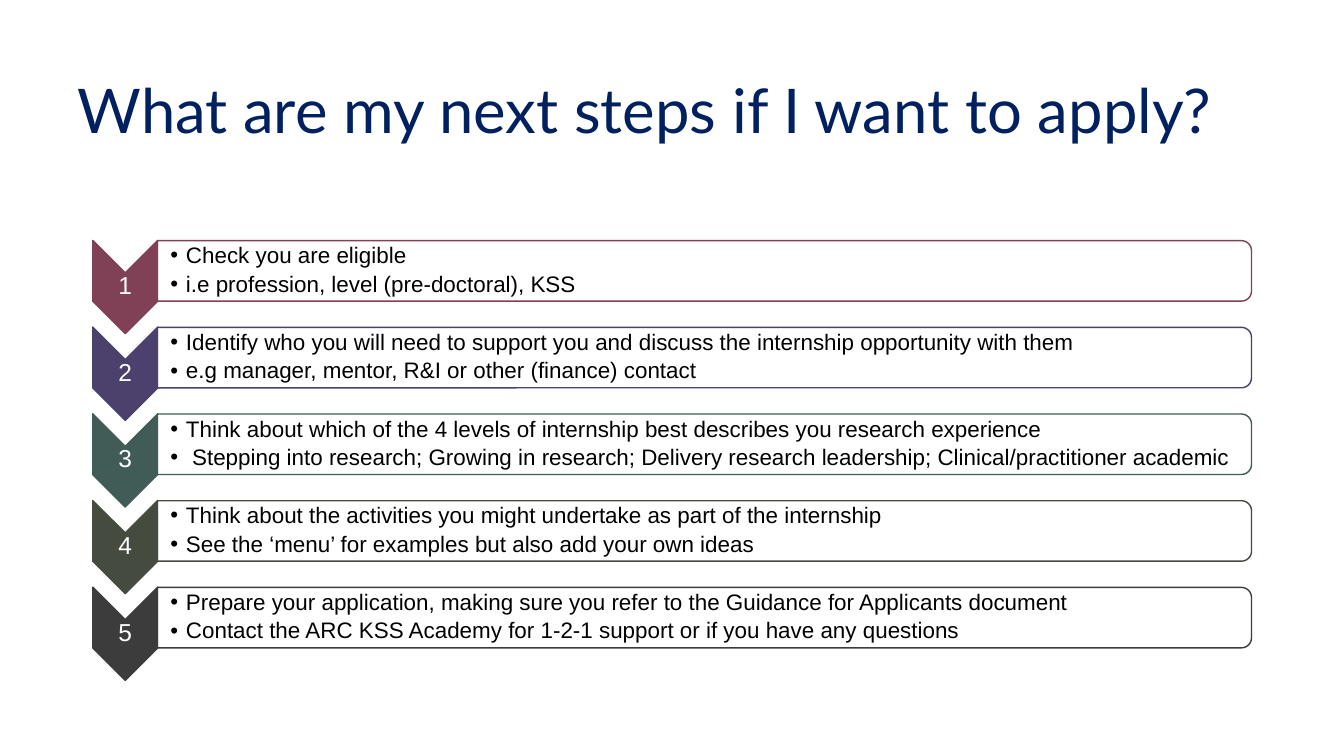
from lxml.etree import SubElement
from pptx import Presentation
from pptx.dml.color import RGBColor as RGB
from pptx.enum.shapes import MSO_SHAPE as SHAPE
from pptx.enum.text import MSO_ANCHOR as ANCHOR, PP_ALIGN as ALIGN
from pptx.oxml.ns import qn
from pptx.util import Pt

PX = 9144
PITCH = 172
NAVY = RGB(0x00, 0x20, 0x60)
WHITE = RGB(0xFF, 0xFF, 0xFF)
BLACK = RGB(0x00, 0x00, 0x00)
PLUM = RGB(0x80, 0x40, 0x55)
VIOLET = RGB(0x4C, 0x41, 0x6D)
TEAL = RGB(0x41, 0x5B, 0x57)
OLIVE = RGB(0x46, 0x4B, 0x3F)
GREY = RGB(0x3C, 0x3C, 0x3C)

STEPS = [
    (PLUM, "Check you are eligible",
     "i.e profession, level (pre-doctoral), KSS"),
    (VIOLET, "Identify who you will need to support you and discuss the internship opportunity with them",
     "e.g manager, mentor, R&I or other (finance) contact"),
    (TEAL, "Think about which of the 4 levels of internship best describes you research experience",
     " Stepping into research; Growing in research; Delivery research leadership; Clinical/practitioner academic"),
    (OLIVE, "Think about the activities you might undertake as part of the internship",
     "See the ‘menu’ for examples but also add your own ideas"),
    (GREY, "Prepare your application, making sure you refer to the Guidance for Applicants document",
     "Contact the ARC KSS Academy for 1-2-1 support or if you have any questions"),
]

deck = Presentation()
deck.slide_width, deck.slide_height = 2667 * PX, 1500 * PX
slide = deck.slides.add_slide(deck.slide_layouts[6])


def add_text(box, lines, font, size, color, inset=2, left=2, bullet=False):
    x, y, w, h = (n * PX for n in box)
    frame = slide.shapes.add_textbox(x, y, w, h).text_frame
    frame.word_wrap = True
    frame.vertical_anchor = ANCHOR.MIDDLE
    frame.margin_left = left * PX
    frame.margin_right = frame.margin_top = frame.margin_bottom = inset * PX
    for i, line in enumerate(lines):
        para = frame.add_paragraph() if i else frame.paragraphs[0]
        para.line_spacing = 0.9
        para.alignment = ALIGN.LEFT if bullet else ALIGN.CENTER
        if bullet:
            para.space_after = Pt(6)
            props = para._p.get_or_add_pPr()
            props.set("marL", str(31 * PX))
            props.set("indent", str(-31 * PX))
            tint = SubElement(props, qn("a:buClr"))
            SubElement(tint, qn("a:srgbClr"), val=str(color))
            SubElement(props, qn("a:buFont"), typeface=font)
            SubElement(props, qn("a:buChar"), char="•")
        run = para.add_run()
        run.text = line
        run.font.name = font
        run.font.size = Pt(size)
        run.font.color.rgb = color


def add_turned(kind, box, fill, edge):
    shape = slide.shapes.add_shape(kind, *(n * PX for n in box))
    shape.rotation = 90
    shape.shadow.inherit = False
    shape.fill.solid()
    shape.fill.fore_color.rgb = fill
    shape.line.color.rgb = edge
    shape.line.width = Pt(2)
    return shape


add_text((111, 80, 2367, 290), ["What are my next steps if I want to apply? "],
         "Lato", 88, NAVY, inset=0, left=0)

for i, (color, *lines) in enumerate(STEPS):
    drop = i * PITCH
    add_turned(SHAPE.CHEVRON, (156, 505 + drop, 185, 129), color, color)
    add_text((184, 541 + drop, 129, 55), [str(i + 1)], "Arial", 35, WHITE)
    panel = add_turned(SHAPE.ROUND_2_SAME_RECTANGLE,
                       (1338, -548 + drop, 120, 2171), WHITE, color)
    tone = panel.fill._xPr.find(qn("a:solidFill"))[0]
    SubElement(tone, qn("a:alpha"), val="90000")
    add_text((313, 483 + drop, 2165, 108), lines, "Arial", 32, BLACK,
             left=25, bullet=True)

deck.save("out.pptx")
